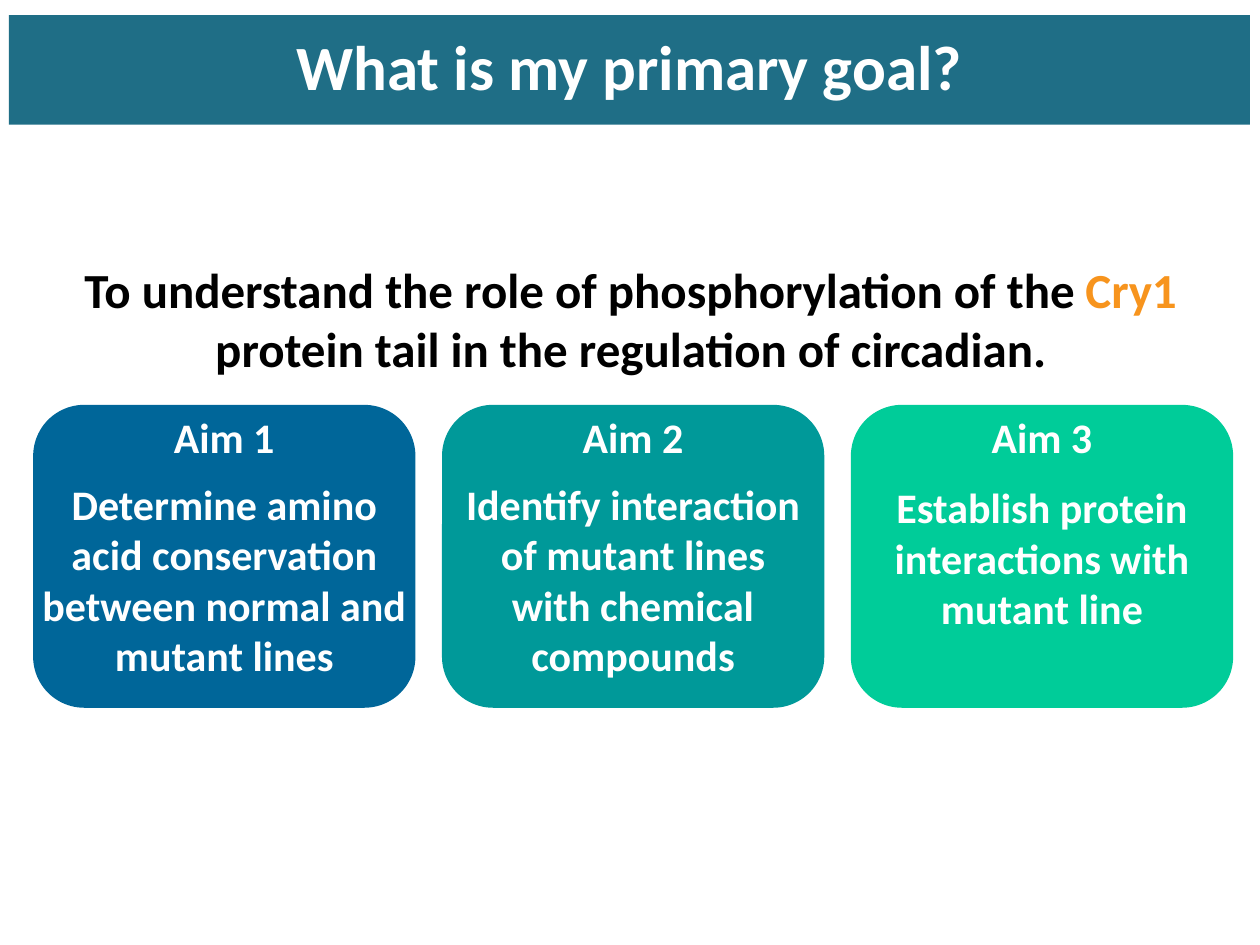
from dataclasses import dataclass

from pptx import Presentation
from pptx.dml.color import RGBColor
from pptx.enum.shapes import MSO_SHAPE
from pptx.enum.text import MSO_ANCHOR, MSO_AUTO_SIZE, PP_ALIGN
from pptx.util import Inches, Pt


@dataclass(frozen=True)
class Theme:
    font: str = "Calibri"
    banner: str = "1F6E86"
    light: str = "FFFFFF"
    dark: str = "000000"
    accent: str = "F7941D"
    title_size: int = 36
    goal_size: int = 28
    aim_size: int = 24


THEME = Theme()

TITLE = "What is my primary goal?"
GOAL = [
    ("To understand the role of phosphorylation of the ", THEME.dark),
    ("Cry1", THEME.accent),
    (" protein tail in the regulation of circadian.", THEME.dark),
]
# heading, description, card colour, side margin of description, top and height of description
AIMS = [
    ("Aim 1", "Determine amino acid conservation between normal and mutant lines",
     "006699", 0, 3.75, 1.69),
    ("Aim 2", "Identify interaction of mutant lines with chemical compounds",
     "009999", 0.13, 3.75, 1.69),
    ("Aim 3", "Establish protein interactions with mutant line",
     "00CC99", 0.13, 3.78, 1.29),
]

SLIDE_WIDTH, SLIDE_HEIGHT = 10, 7.5
CARD_LEFT, CARD_TOP, CARD_WIDTH, CARD_HEIGHT = 0.27, 3.22, 3.02, 2.39
CARD_STEP = 3.245
HEADING_MARGIN, HEADING_HEIGHT = 0.13, 0.49
AIM_INSET = 0.04


def write_text(shape, runs, size, color=THEME.light, anchor=MSO_ANCHOR.MIDDLE,
               inset=None, wrap=True, line_spacing=None, auto_size=MSO_AUTO_SIZE.NONE):
    """Fill a shape with one centred bold paragraph; runs is a string or (text, colour) pairs."""
    frame = shape.text_frame
    frame.word_wrap = wrap
    frame.auto_size = auto_size
    frame.vertical_anchor = anchor
    if inset is not None:
        frame.margin_left = frame.margin_right = Inches(inset)
        frame.margin_top = frame.margin_bottom = Inches(inset)
    paragraph = frame.paragraphs[0]
    paragraph.alignment = PP_ALIGN.CENTER
    if line_spacing:
        paragraph.line_spacing = line_spacing
    for text, run_color in [(runs, color)] if isinstance(runs, str) else runs:
        run = paragraph.add_run()
        run.text = text
        run.font.name = THEME.font
        run.font.size = Pt(size)
        run.font.bold = True
        run.font.color.rgb = RGBColor.from_string(run_color)


def fill_shape(shape, color):
    shape.fill.solid()
    shape.fill.fore_color.rgb = RGBColor.from_string(color)


def add_text_box(slide, left, top, width, height, runs, size, **text_format):
    box = slide.shapes.add_textbox(Inches(left), Inches(top), Inches(width), Inches(height))
    write_text(box, runs, size, **text_format)


def add_title(slide):
    title = slide.shapes.title
    title.left, title.top = Inches(0.07), Inches(0.12)
    title.width, title.height = Inches(9.85), Inches(0.87)
    fill_shape(title, THEME.banner)
    write_text(title, TITLE, THEME.title_size, line_spacing=0.9)


def add_card(slide, left, color):
    card = slide.shapes.add_shape(
        MSO_SHAPE.ROUNDED_RECTANGLE,
        Inches(left), Inches(CARD_TOP), Inches(CARD_WIDTH), Inches(CARD_HEIGHT))
    card.shadow.inherit = False
    fill_shape(card, color)
    card.line.color.rgb = RGBColor.from_string(color)
    card.line.width = Pt(1)


def add_aim(slide, column, heading, description, color, margin, top, height):
    left = CARD_LEFT + column * CARD_STEP
    add_card(slide, left, color)
    add_text_box(slide, left + HEADING_MARGIN, CARD_TOP, CARD_WIDTH - 2 * HEADING_MARGIN,
                 HEADING_HEIGHT, heading, THEME.aim_size, inset=AIM_INSET, wrap=False)
    add_text_box(slide, left + margin, top, CARD_WIDTH - 2 * margin, height,
                 description, THEME.aim_size, inset=AIM_INSET,
                 auto_size=MSO_AUTO_SIZE.SHAPE_TO_FIT_TEXT)


def main():
    presentation = Presentation()
    presentation.slide_width = Inches(SLIDE_WIDTH)
    presentation.slide_height = Inches(SLIDE_HEIGHT)
    slide = presentation.slides.add_slide(presentation.slide_layouts[5])
    add_title(slide)
    add_text_box(slide, 0.54, 2.01, 8.93, 1.04, GOAL, THEME.goal_size,
                 anchor=MSO_ANCHOR.TOP, auto_size=MSO_AUTO_SIZE.SHAPE_TO_FIT_TEXT)
    for column, aim in enumerate(AIMS):
        add_aim(slide, column, *aim)
    presentation.save("out.pptx")


if __name__ == "__main__":
    main()
